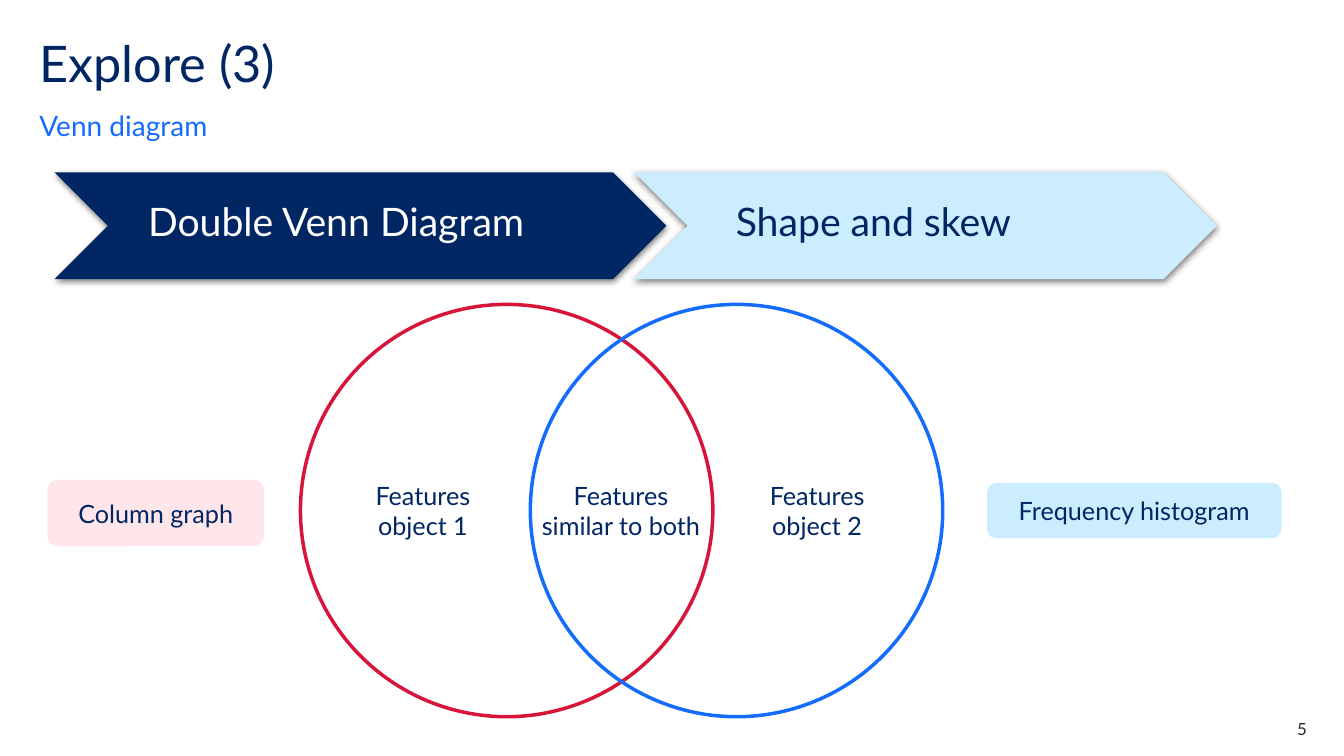
import pptx
import pptx.dml.color
import pptx.enum.shapes
import pptx.enum.text
import pptx.oxml
import pptx.oxml.ns
import pptx.util

Inches = pptx.util.Inches
Pt = pptx.util.Pt
SHAPE = pptx.enum.shapes.MSO_SHAPE
ALIGN = pptx.enum.text.PP_ALIGN
ANCHOR = pptx.enum.text.MSO_ANCHOR

NAVY, BLUE, RED = "002664", "146CFD", "D7153A"
PALE_BLUE, PALE_RED, WHITE, INK = "CBEDFD", "FFE6EA", "FFFFFF", "22272B"

SHADOW = (
    f'<a:effectLst {pptx.oxml.ns.nsdecls("a")}>'
    '<a:outerShdw blurRad="57150" dist="19050" dir="5400000" algn="ctr" rotWithShape="0">'
    '<a:srgbClr val="000000"><a:alpha val="50000"/></a:srgbClr>'
    "</a:outerShdw></a:effectLst>"
)


def color(value):
    return pptx.dml.color.RGBColor.from_string(value)


def apply(target, values):
    for name, value in values.items():
        setattr(target, name, value)


class SlideBuilder:
    font = "Lato"
    no_margins = dict.fromkeys(
        ("margin_left", "margin_top", "margin_right", "margin_bottom"), 0
    )
    centered = {"alignment": ALIGN.CENTER}

    def __init__(self, slide):
        self.slide = slide

    def fill_text(self, frame, lines, size, ink, paragraph_format, frame_format):
        apply(frame, {"word_wrap": True, **frame_format})
        for index, line in enumerate(lines):
            paragraph = frame.paragraphs[0] if index == 0 else frame.add_paragraph()
            apply(paragraph, paragraph_format)
            run = paragraph.add_run()
            run.text = line
            apply(run.font, {"name": self.font, "size": Pt(size)})
            run.font.color.rgb = color(ink)

    def text(self, box, line, size, ink, paragraph_format, frame_format):
        textbox = self.slide.shapes.add_textbox(*map(Inches, box))
        self.fill_text(textbox.text_frame, [line], size, ink, paragraph_format, frame_format)

    def shape(self, preset, box, fill=None, line=None):
        shape = self.slide.shapes.add_shape(preset, *map(Inches, box))
        shape.shadow.inherit = False
        if fill:
            shape.fill.solid()
            shape.fill.fore_color.rgb = color(fill)
        else:
            shape.fill.background()
        if line:
            shape.line.color.rgb = color(line)
            shape.line.width = Pt(2.5)
        else:
            shape.line.fill.background()
        return shape

    def chevron(self, box, fill):
        properties = self.shape(SHAPE.CHEVRON, box, fill)._element.spPr
        properties.remove(properties.find(pptx.oxml.ns.qn("a:effectLst")))
        properties.append(pptx.oxml.parse_xml(SHADOW))

    def label(self, box, lines, fill=None):
        label = self.shape(SHAPE.ROUNDED_RECTANGLE, box, fill)
        self.fill_text(label.text_frame, lines, 18, NAVY, self.centered,
                       {"vertical_anchor": ANCHOR.MIDDLE})


def main():
    deck = pptx.Presentation()
    apply(deck, {"slide_width": Inches(13.33), "slide_height": Inches(7.5)})
    page = SlideBuilder(deck.slides.add_slide(deck.slide_layouts[6]))
    tight = {"line_spacing": 0.9}

    page.text((0.39, 0.39, 11.02, 0.6), "Explore (3)", 36, NAVY, tight, page.no_margins)
    page.text((0.39, 1.07, 11.02, 0.34), "Venn diagram", 20, BLUE,
              {"line_spacing": 1.5, "space_after": Pt(12)},
              {**page.no_margins, "vertical_anchor": ANCHOR.BOTTOM})

    page.chevron((6.29, 1.71, 5.78, 1.06), PALE_BLUE)
    page.chevron((0.54, 1.71, 6.07, 1.06), NAVY)
    page.text((1.37, 1.96, 4.34, 0.65), "Double Venn Diagram", 28, WHITE, tight, {})
    page.text((7.2, 1.96, 3.26, 0.55), "Shape and skew", 28, NAVY, tight, {})

    page.label((0.47, 4.76, 2.15, 0.66), ["Column graph"], PALE_RED)
    for left, outline in ((2.98, RED), (5.26, BLUE)):
        page.shape(SHAPE.OVAL, (left, 3.02, 4.09, 4.09), line=outline)
    for left, width, lines in (
        (3.47, 1.45, ["Features object 1"]),
        (7.34, 1.53, ["Features object 2"]),
        (4.98, 2.36, ["Features", "similar to both"]),
    ):
        page.label((left, 4.64, width, 0.85), lines)
    page.label((9.79, 4.79, 2.92, 0.55), ["Frequency histogram"], PALE_BLUE)

    page.text((12.17, 7.13, 0.79, 0.2), "5", 12, INK,
              {"alignment": ALIGN.RIGHT}, page.no_margins)
    deck.save("out.pptx")


if __name__ == "__main__":
    main()
